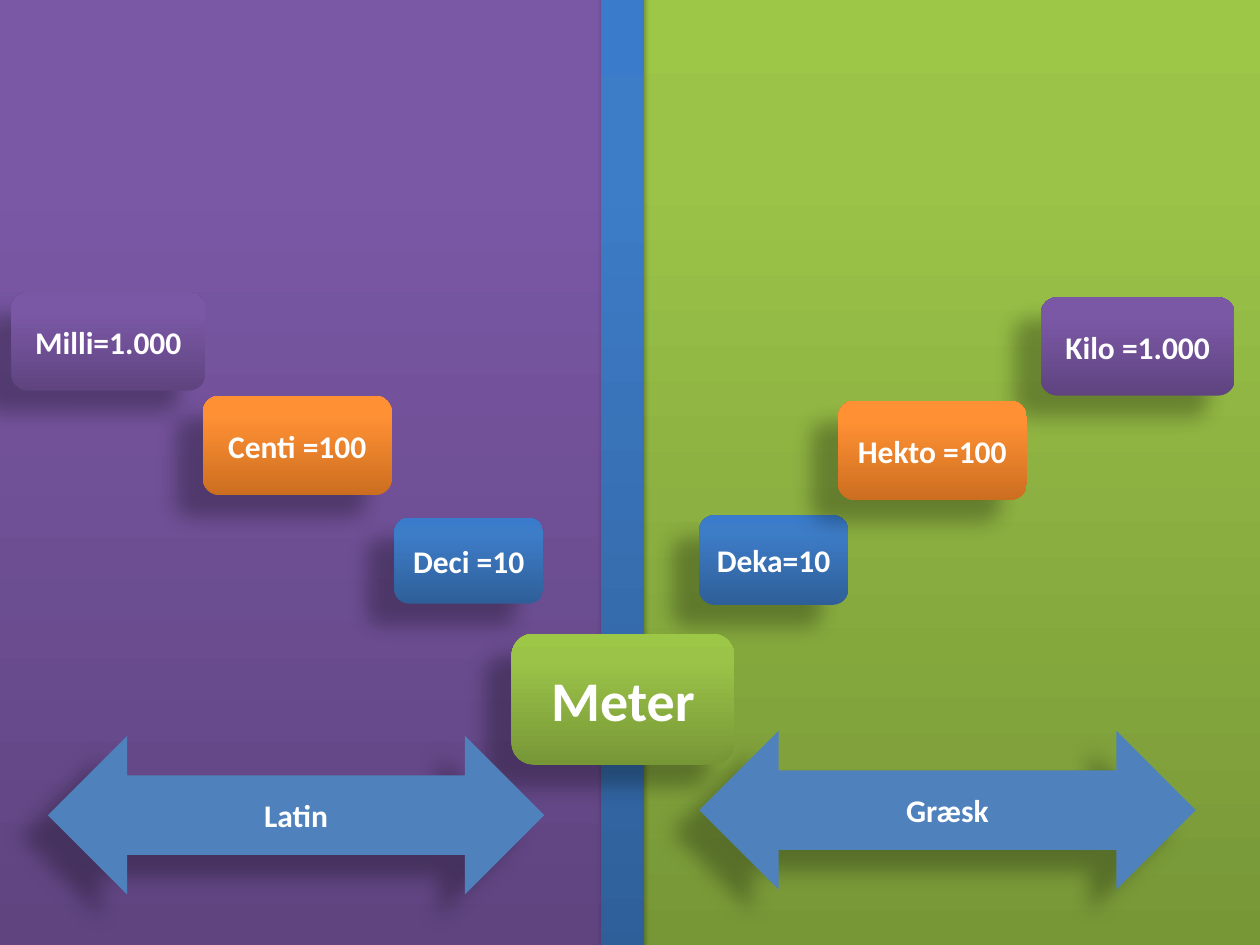
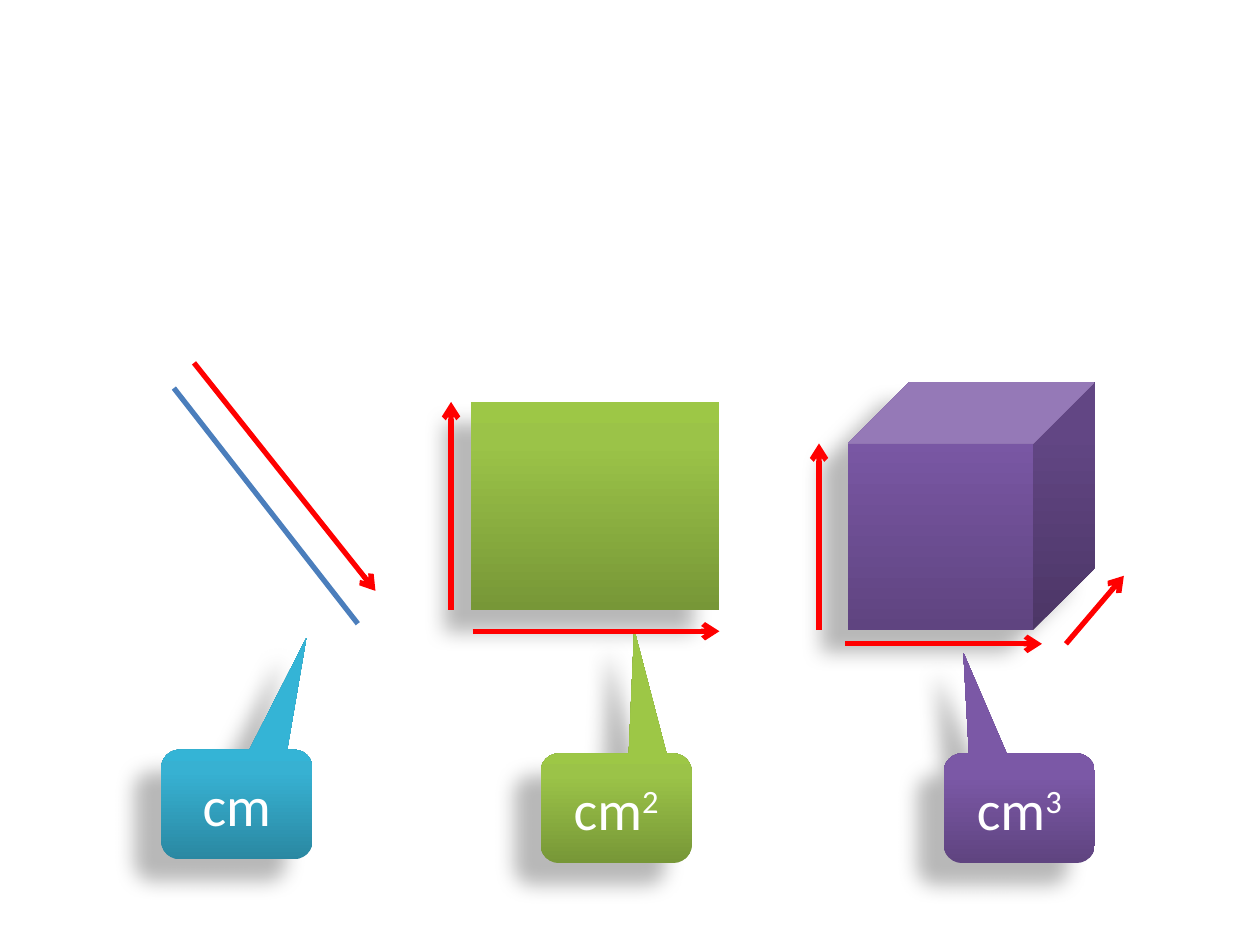
from copy import deepcopy
from typing import NamedTuple

from lxml import etree
from pptx import Presentation
from pptx.dml.color import RGBColor
from pptx.enum.shapes import MSO_CONNECTOR, MSO_SHAPE
from pptx.enum.text import MSO_ANCHOR, PP_ALIGN
from pptx.oxml.ns import qn
from pptx.util import Inches, Pt

RECT = MSO_SHAPE.RECTANGLE
ROUND = MSO_SHAPE.ROUNDED_RECTANGLE
ARROW = MSO_SHAPE.LEFT_RIGHT_ARROW
CUBE = MSO_SHAPE.CUBE
CALLOUT = MSO_SHAPE.ROUNDED_RECTANGULAR_CALLOUT
STRAIGHT = MSO_CONNECTOR.STRAIGHT
CENTER = PP_ALIGN.CENTER
MIDDLE = MSO_ANCHOR.MIDDLE

# Grid: 100 columns by 75 rows of square cells
WIDTH, HEIGHT = Inches(10), Inches(7.5)
CELL = WIDTH / 100

COLORS = {
    "white": "FFFFFF",
    "black": "000000",
    "arrow": "4F81BD",
    "line": "4B7EBC",
    "red": "FF0000",
}
# Gradients run from the bottom edge to the top edge
GRADIENTS = {
    "purple": ("5F4480", "7B58A6", "7C57A8"),
    "green": ("779737", "9BC348", "9DC746"),
    "blue": ("2F5F99", "3D7CC7", "3A7CCB"),
    "orange": ("CC6E20", "FF9034", "FF9136"),
    "teal": ("2A88A2", "37B1D2", "34B4D6"),
}
STOPS = (0, 0.8, 1)


class Shadow(NamedTuple):
    opacity: int
    blur: float
    distance: float
    angle: int


SOFT = Shadow(35, 3.1, 1.8, 90)
DEEP = Shadow(28, 11.8, 19.7, 141)


class Block(NamedTuple):
    kind: MSO_SHAPE
    at: tuple[float, float, float, float]
    color: str
    text: str = ""
    power: str = ""
    size: int = 18
    bold: bool = True
    shadow: Shadow = DEEP
    pointer: tuple[float, ...] = ()


class Line(NamedTuple):
    start: tuple[float, float]
    end: tuple[float, float]
    color: str = "red"
    head: bool = True


def cells(*counts: float) -> list[int]:
    return [round(count * CELL) for count in counts]


def rgb(name: str) -> RGBColor:
    return RGBColor.from_string(COLORS[name])


def paint(box, color: str) -> None:
    if color in COLORS:
        box.fill.solid()
        box.fill.fore_color.rgb = rgb(color)
        return
    box.fill.gradient()
    box.fill.gradient_angle = 90
    stop_list = box.fill.gradient_stops
    last = next(box._element.spPr.iter(qn("a:gsLst")))[-1]
    last.addnext(deepcopy(last))
    stop_list = box.fill.gradient_stops
    for stop, position, value in zip(stop_list, STOPS, GRADIENTS[color]):
        stop.position = position
        stop.color.rgb = RGBColor.from_string(value)


def cast_shadow(box, shadow: Shadow) -> None:
    box.shadow.inherit = False
    effects = box._element.spPr.find(qn("a:effectLst"))
    outer = etree.SubElement(effects, qn("a:outerShdw"), {
        "blurRad": str(Pt(shadow.blur)),
        "dist": str(Pt(shadow.distance)),
        "dir": str(shadow.angle * 60000),
        "rotWithShape": "0",
    })
    color = etree.SubElement(outer, qn("a:srgbClr"), val=COLORS["black"])
    etree.SubElement(color, qn("a:alpha"), val=str(shadow.opacity * 1000))


def write(box, block: Block) -> None:
    frame = box.text_frame
    frame.word_wrap = True
    frame.vertical_anchor = MIDDLE
    para = frame.paragraphs[0]
    para.alignment = CENTER
    style = {"name": "Calibri", "size": Pt(block.size), "bold": block.bold}
    for text in filter(None, (block.text, block.power)):
        span = para.add_run()
        span.text = text
        for key, value in style.items():
            setattr(span.font, key, value)
        span.font.color.rgb = rgb("white")
    if block.power:
        span.font._element.set("baseline", "30000")


def draw_block(page, block: Block) -> None:
    box = page.shapes.add_shape(block.kind, *cells(*block.at))
    for index, value in enumerate(block.pointer):
        box.adjustments[index] = value
    paint(box, block.color)
    box.line.fill.background()
    cast_shadow(box, block.shadow)
    if block.text:
        write(box, block)


def draw_line(page, line: Line) -> None:
    connector = page.shapes.add_connector(STRAIGHT, *cells(*line.start, *line.end))
    connector.line.color.rgb = rgb(line.color)
    connector.line.width = Pt(3)
    properties = connector._element.spPr
    if line.head:
        etree.SubElement(properties.find(qn("a:ln")), qn("a:tailEnd"), type="arrow")
    etree.SubElement(properties, qn("a:effectLst"))


# Slide 1: Latin and Greek prefixes on either side of the metre
PREFIXES = [
    Block(RECT, (-5.4, -1.9, 53.4, 76.9), "purple", shadow=SOFT),
    Block(RECT, (49.4, -1.9, 53.4, 76.9), "green", shadow=SOFT),
    Block(ROUND, (47.7, -1.9, 3.4, 78.7), "blue", shadow=SOFT),
    Block(ROUND, (82.6, 23.6, 15.4, 7.8), "purple", "Kilo =1.000"),
    Block(ROUND, (55.5, 40.9, 11.8, 7.1), "blue", "Deka=10"),
    Block(ROUND, (16.1, 31.4, 15, 7.9), "orange", "Centi =100"),
    Block(ROUND, (66.5, 31.8, 15, 7.9), "orange", "Hekto =100"),
    Block(ROUND, (0.9, 23.2, 15.4, 7.8), "purple", "Milli=1.000"),
    Block(ROUND, (31.3, 41.1, 11.8, 6.8), "blue", "Deci =10"),
    Block(ROUND, (40.6, 50.3, 17.7, 10.4), "green", "Meter", size=32),
    Block(ARROW, (3.8, 58.4, 39.4, 12.6), "arrow", "Latin"),
    Block(ARROW, (55.5, 58, 39.4, 12.6), "arrow", "Græsk"),
]


def unit_label(left: float, top: float, color: str, power: str,
               pointer: tuple[float, float]) -> Block:
    return Block(CALLOUT, (left, top, 12, 8.7), color, "cm", power,
                 size=32, bold=False, pointer=pointer)


# Slide 2: one, two and three dimensions
LENGTH = Line((13.8, 30.8), (28.4, 49.5), "line", head=False)
FIGURES = [
    Block(RECT, (37.4, 31.9, 19.7, 16.5), "green"),
    Block(CUBE, (67.3, 30.3, 19.6, 19.7), "purple"),
    unit_label(12.8, 59.5, "teal", "", (0.46, -1.52)),
    unit_label(42.9, 59.8, "green", "2", (0.12, -1.63)),
    unit_label(74.9, 59.8, "purple", "3", (-0.37, -1.42)),
]
DIMENSIONS = [
    Line((15.4, 28.8), (29.8, 46.9)),
    Line((35.8, 48.4), (35.8, 31.9)),
    Line((37.5, 50.1), (57.1, 50.1)),
    Line((65, 50), (65, 35.2)),
    Line((67.1, 51.1), (82.7, 51.1)),
    Line((84.6, 51.1), (89.2, 45.7)),
]


def main() -> None:
    deck = Presentation()
    deck.slide_width, deck.slide_height = WIDTH, HEIGHT
    blank = deck.slide_layouts[6]
    for items in (PREFIXES, [LENGTH, *FIGURES, *DIMENSIONS]):
        page = deck.slides.add_slide(blank)
        for item in items:
            draw = draw_line if isinstance(item, Line) else draw_block
            draw(page, item)
    deck.save("out.pptx")


if __name__ == "__main__":
    main()
